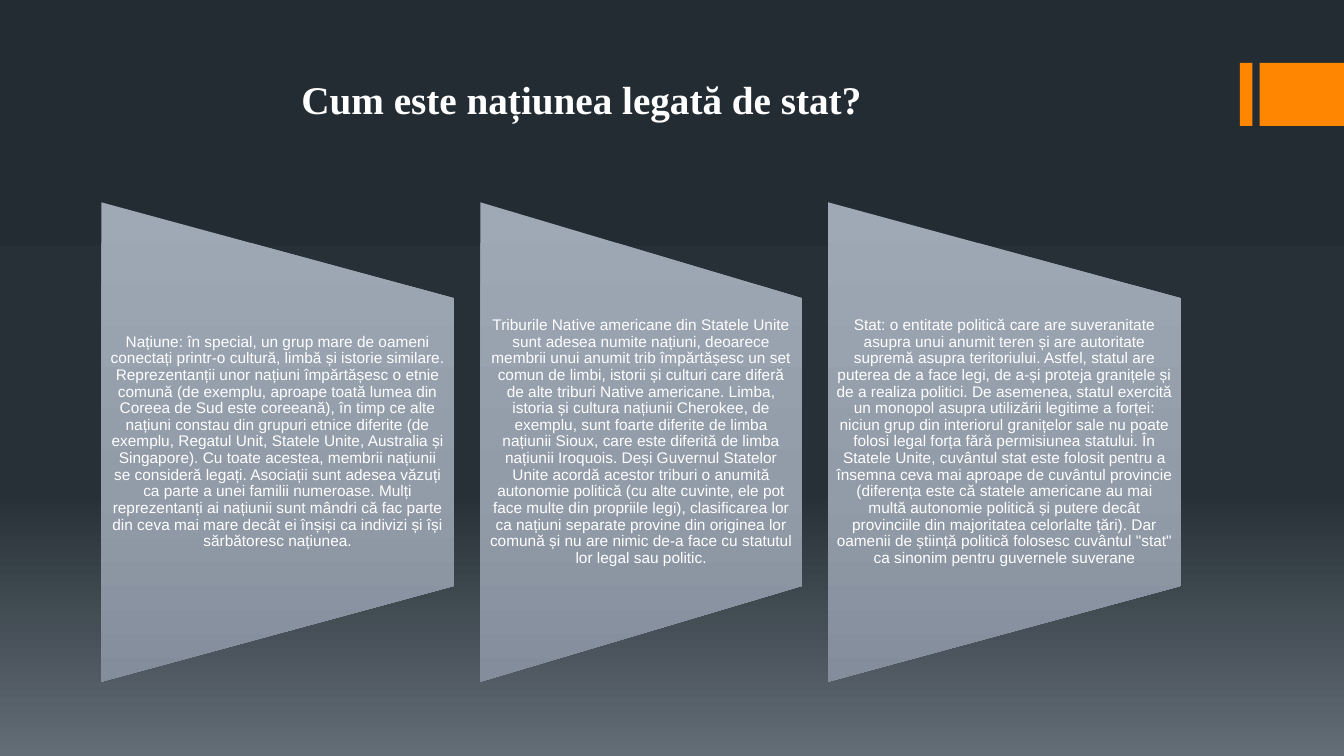
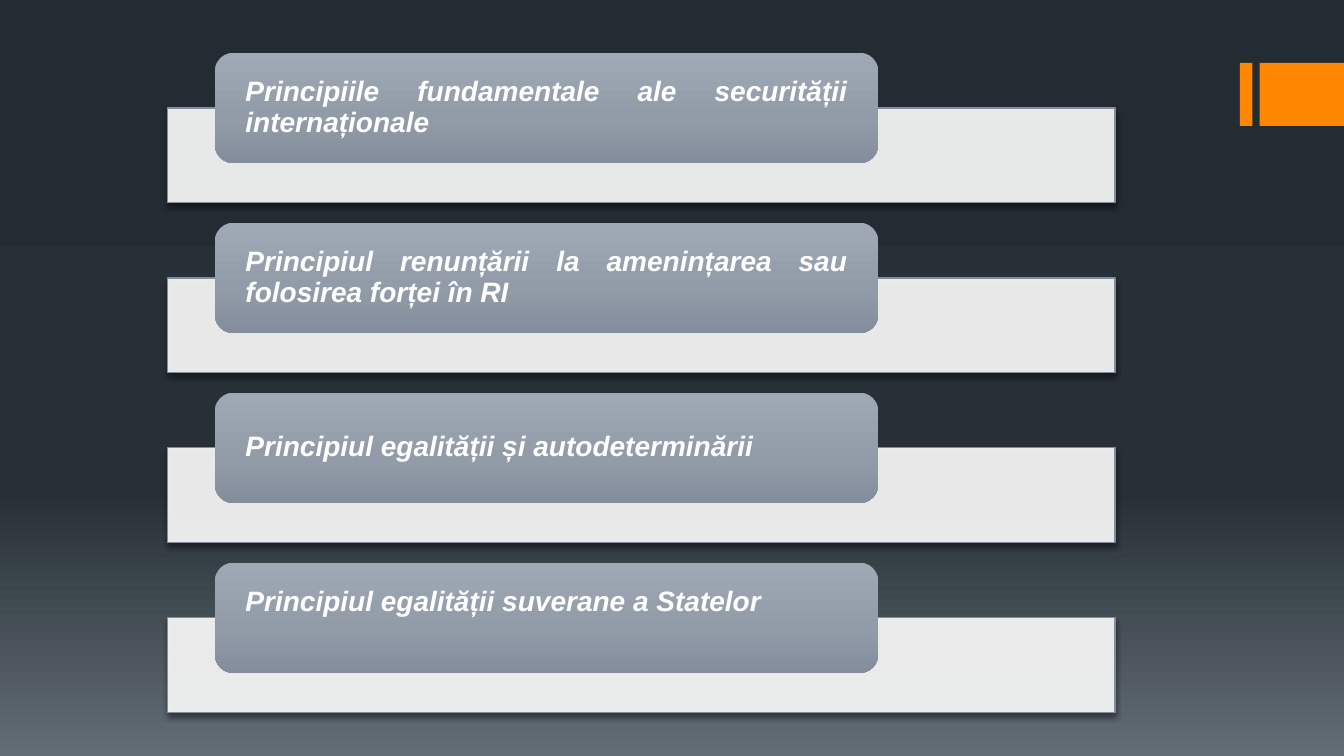
import pptx
import pptx.util
import pptx.dml.color
import pptx.enum.shapes
import pptx.enum.text
import pptx.oxml
import pptx.oxml.ns

Pt = pptx.util.Pt
qn = pptx.oxml.ns.qn
SHAPE = pptx.enum.shapes.MSO_SHAPE
ALIGN = pptx.enum.text.PP_ALIGN
ANCHOR = pptx.enum.text.MSO_ANCHOR

WHITE, ORANGE, GREY = "FFFFFF", "FF8600", "838D9B"
NIGHT = [(0, "242C33"), (65, "273037"), (100, "636D76")]
STEEL = [(0, "9FA9B6"), (60, "929BA8"), (100, GREY)]

NATION = (
    "Națiune: în special, un grup mare de oameni conectați printr-o cultură, limbă și istorie "
    "similare. Reprezentanții unor națiuni împărtășesc o etnie comună (de exemplu, aproape toată "
    "lumea din Coreea de Sud este coreeană), în timp ce alte națiuni constau din grupuri etnice "
    "diferite (de exemplu, Regatul Unit, Statele Unite, Australia și Singapore). Cu toate acestea, "
    "membrii națiunii se consideră legați. Asociații sunt adesea văzuți ca parte a unei familii "
    "numeroase. Mulți reprezentanți ai națiunii sunt mândri că fac parte din ceva mai mare decât "
    "ei înșiși ca indivizi și își sărbătoresc națiunea."
)
TRIBES = (
    "Triburile Native americane din Statele Unite sunt adesea numite națiuni, deoarece membrii "
    "unui anumit trib împărtășesc un set comun de limbi, istorii și culturi care diferă de alte "
    "triburi Native americane. Limba, istoria și cultura națiunii Cherokee, de exemplu, sunt "
    "foarte diferite de limba națiunii Sioux, care este diferită de limba națiunii Iroquois. Deși "
    "Guvernul Statelor Unite acordă acestor triburi o anumită autonomie politică (cu alte cuvinte, "
    "ele pot face multe din propriile legi), clasificarea lor ca națiuni separate provine din "
    "originea lor comună și nu are nimic de-a face cu statutul lor legal sau politic."
)
STATE = (
    "Stat: o entitate politică care are suveranitate asupra unui anumit teren și are autoritate "
    "supremă asupra teritoriului. Astfel, statul are puterea de a face legi, de a-și proteja "
    "granițele și de a realiza politici. De asemenea, statul exercită un monopol asupra utilizării "
    "legitime a forței: niciun grup din interiorul granițelor sale nu poate folosi legal forța "
    "fără permisiunea statului. În Statele Unite, cuvântul stat este folosit pentru a însemna ceva "
    "mai aproape de cuvântul provincie (diferența este că statele americane au mai multă autonomie "
    "politică și putere decât provinciile din majoritatea celorlalte țări). Dar oamenii de știință "
    "politică folosesc cuvântul \"stat\" ca sinonim pentru guvernele suverane"
)
COLUMNS = [(252, NATION), (229.8, TRIBES), (252, STATE)]
PRINCIPLES = [
    ("Principiile fundamentale ale securității internaționale", 0),
    ("Principiul renunțării la amenințarea sau folosirea forței în RI", 0),
    ("Principiul egalității și autodeterminării", 0),
    ("Principiul egalității suverane a Statelor", 22),
]


def rgb(color):
    """Turn a hex string into a colour."""
    return pptx.dml.color.RGBColor.from_string(color)


def add_xml(parent, xml):
    """Append a fragment of DrawingML to an element."""
    ns = pptx.oxml.ns.nsdecls("a")
    parent.append(pptx.oxml.parse_xml(xml.replace(" ", f" {ns} ", 1)))


def paint_gradient(fill, element, stops):
    """Fill with a gradient that runs down the page."""
    fill.gradient()
    fill.gradient_angle = 270
    grad = next(element.iter(qn("a:gradFill")))
    grad.set("rotWithShape", "0")
    gs_list = grad.find(qn("a:gsLst"))
    gs_list.clear()
    for pos, color in stops:
        add_xml(gs_list, f'<a:gs pos="{pos * 1000}"><a:srgbClr val="{color}"/></a:gs>')


def add_shape(s, kind, x, y, w, h, fill):
    """Add an unlined shape with a solid or a gradient fill."""
    sp = s.shapes.add_shape(kind, Pt(x), Pt(y), Pt(w), Pt(h))
    sp.shadow.inherit = False
    sp.line.fill.background()
    if isinstance(fill, str):
        sp.fill.solid()
        sp.fill.fore_color.rgb = rgb(fill)
    else:
        paint_gradient(sp.fill, sp._element.spPr, fill)
    return sp


def write(sp, text, size, align, font="Arial", bold=False, italic=False,
          side=6, top=0, bottom=0, spacing=0.9):
    """Write one paragraph, vertically centred, into a shape."""
    tf = sp.text_frame
    tf.word_wrap = True
    tf.vertical_anchor = ANCHOR.MIDDLE
    tf.margin_left = tf.margin_right = Pt(side)
    tf.margin_top, tf.margin_bottom = Pt(top), Pt(bottom)
    p = tf.paragraphs[0]
    p.alignment = align
    p.line_spacing = spacing
    r = p.add_run()
    r.text = text
    r.font.name, r.font.size = font, Pt(size)
    r.font.bold, r.font.italic = bold, italic
    r.font.color.rgb = rgb(WHITE)


def add_text(s, x, y, w, h, text, size, **style):
    """Add a centred text box."""
    sp = s.shapes.add_textbox(Pt(x), Pt(y), Pt(w), Pt(h))
    write(sp, text, size, ALIGN.CENTER, **style)


def add_slide(prs):
    """Add a blank slide with the orange corner marks."""
    s = prs.slides.add_slide(prs.slide_layouts[6])
    for x, w in ((885.6, 9), (899.8, 60.2)):
        add_shape(s, SHAPE.RECTANGLE, x, 45, w, 45, ORANGE)
    return s


def add_column(s, x, w, text):
    """Add a trapezoid turned on its side, with text over it."""
    y, h = 144.5, 342.4
    sp = add_shape(s, SHAPE.FLOWCHART_MANUAL_OPERATION,
                   x + (w - h) / 2, y + (h - w) / 2, h, w, STEEL)
    sp.rotation = 270
    add_text(s, x, y + h / 5, w, h * 3 / 5, text, 11)


def add_principle(s, y, text, bottom):
    """Add a pale band with a rounded label across its upper edge."""
    band = add_shape(s, SHAPE.RECTANGLE, 119.5, y + 39.4, 677, 67.7, WHITE)
    add_xml(next(band._element.spPr.iter(qn("a:srgbClr"))), '<a:alpha val="90000"/>')
    band.line.color.rgb = rgb(GREY)
    band.line.width = Pt(1)
    add_xml(band._element.spPr.find(qn("a:effectLst")),
            f'<a:outerShdw blurRad="{Pt(3.8)}" dist="{Pt(3)}" dir="5400000" rotWithShape="0">'
            '<a:srgbClr val="000000"><a:alpha val="48000"/></a:srgbClr></a:outerShdw>')
    label = add_shape(s, SHAPE.ROUNDED_RECTANGLE, 153.5, y, 473.8, 78.8, STEEL)
    write(label, text, 20, ALIGN.JUSTIFY, bold=True, italic=True, side=18, bottom=bottom)


def build_nation_slide(prs):
    """Build the slide on nation and state."""
    s = add_slide(prs)
    x, gap = 72.4, 18.7
    for w, text in COLUMNS:
        add_column(s, x, w, text)
        x += w + gap
    add_text(s, 112.5, 50.4, 605.5, 41, "Cum este națiunea legată de stat?", 28,
             font="Times New Roman", bold=True, side=7.2, top=3.6, bottom=3.6, spacing=1.0)


def build_principles_slide(prs):
    """Build the slide on the principles of security."""
    s = add_slide(prs)
    for i, (text, bottom) in enumerate(PRINCIPLES):
        add_principle(s, 37.7 + i * 121.4, text, bottom)


def main():
    """Build and save the presentation."""
    prs = pptx.Presentation()
    prs.slide_width, prs.slide_height = Pt(960), Pt(540)
    master = prs.slide_master
    paint_gradient(master.background.fill, master._element, NIGHT)
    build_nation_slide(prs)
    build_principles_slide(prs)
    prs.save("out.pptx")


if __name__ == "__main__":
    main()
